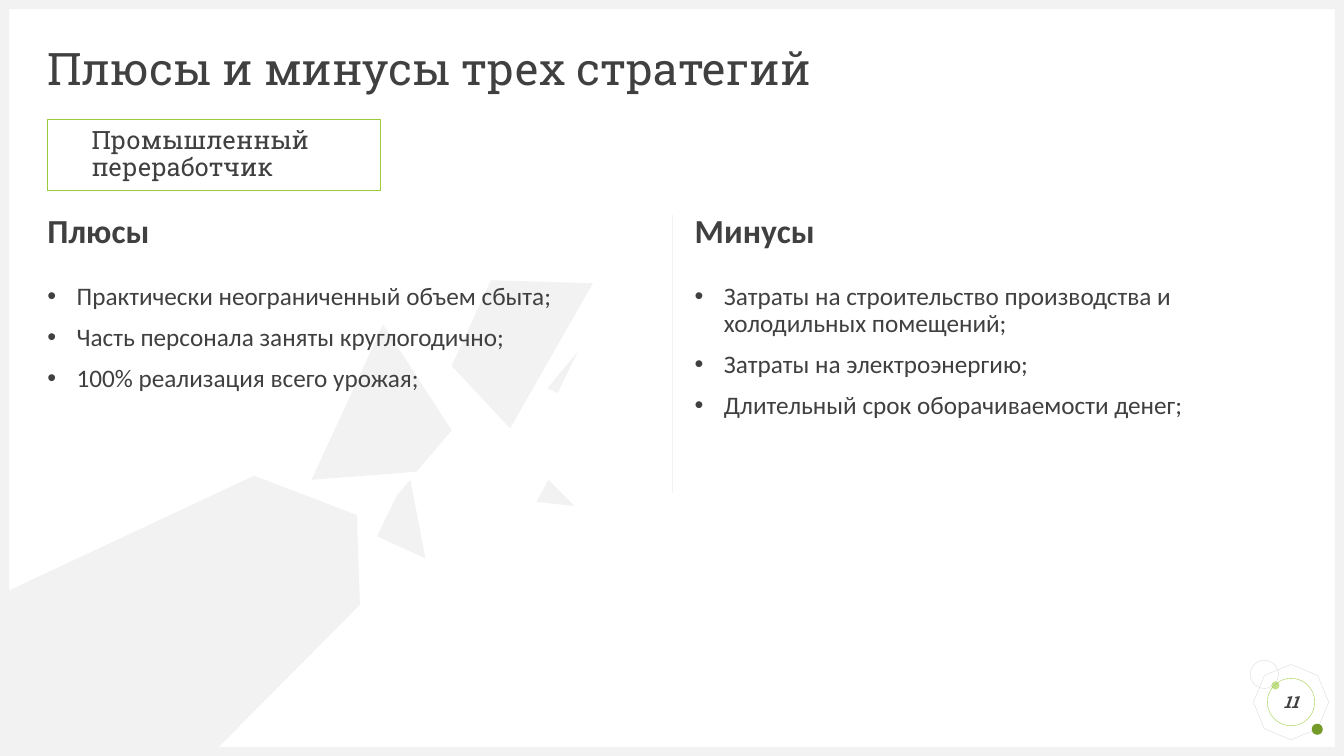
from dataclasses import dataclass
from typing import NamedTuple, Optional

from lxml import etree
from pptx import Presentation
from pptx.dml.color import RGBColor
from pptx.enum.shapes import MSO_CONNECTOR, MSO_SHAPE as Preset
from pptx.enum.text import MSO_ANCHOR as Anchor, MSO_AUTO_SIZE, PP_ALIGN as Align
from pptx.oxml.ns import qn
from pptx.util import Pt

PX = 9144  # EMU in one px, 100 px to the inch
SLIDE_WIDTH, SLIDE_HEIGHT = 1333, 750
FRAME = 9
MARGIN = 47
COLUMN_WIDTH = 598
COLUMN_LEFTS = (MARGIN, 689)
BULLET_INDENT = 29

TEXT_GREY = RGBColor(0x40, 0x40, 0x40)
PALE_GREY = RGBColor(0xF2, 0xF2, 0xF2)
OUTLINE_GREY = RGBColor(0xD9, 0xD9, 0xD9)
GREEN = RGBColor(0x9A, 0xCB, 0x39)
LIGHT_GREEN = RGBColor(0xC2, 0xE0, 0x88)
DARK_GREEN = RGBColor(0x74, 0x9A, 0x29)

SERIF, SANS = "Roboto Slab", "Calibri"


class Box(NamedTuple):
    left: int
    top: int
    width: int
    height: int

    def emu(self) -> list[int]:
        return [length * PX for length in self]


@dataclass
class Figure:
    box: Box
    preset: Preset = Preset.RECTANGLE
    fill: Optional[RGBColor] = None
    line: Optional[RGBColor] = None
    line_points: float = 0.25
    rotation: float = 0


@dataclass
class Column:
    left: int
    heading: str
    points: list[str]


FIGURES = [
    Figure(Box(1246, 662, 69, 69), Preset.OCTAGON, line=OUTLINE_GREY, rotation=22.7),
    Figure(Box(1261, 676, 8, 8), Preset.OVAL, fill=LIGHT_GREEN),
    Figure(Box(1301, 718, 11, 11), Preset.OVAL, fill=DARK_GREEN),
    Figure(Box(1240, 655, 28, 28), Preset.OVAL, line=OUTLINE_GREY),
    Figure(Box(0, SLIDE_HEIGHT - FRAME, SLIDE_WIDTH, FRAME), fill=PALE_GREY),
    Figure(Box(0, 0, SLIDE_WIDTH, FRAME), fill=PALE_GREY),
    Figure(Box(0, 0, FRAME, SLIDE_HEIGHT), fill=PALE_GREY),
    Figure(Box(SLIDE_WIDTH - FRAME, 0, FRAME, SLIDE_HEIGHT), fill=PALE_GREY),
    Figure(Box(MARGIN, 119, 330, 70), line=GREEN, line_points=0.75),
]
NUMBER_RING = Figure(Box(1257, 673, 47, 47), Preset.OVAL, line=GREEN)

SHARDS = [
    [(544, 476), (570, 502), (532, 498)],
    [(407, 476), (422, 554), (374, 532), (394, 491)],
    [(252, 472), (354, 511), (357, 600), (208, 750), (15, 750), (0, 735), (0, 590)],
    [(573, 349), (553, 390), (543, 385)],
    [(380, 322), (448, 427), (413, 468), (309, 476)],
    [(487, 278), (588, 281), (506, 425), (448, 363)],
]

COLUMNS = [
    Column(COLUMN_LEFTS[0], "Плюсы", [
        "Практически неограниченный объем сбыта;",
        "Часть персонала заняты круглогодично;",
        "100% реализация всего урожая;",
    ]),
    Column(COLUMN_LEFTS[1], "Минусы", [
        "Затраты на строительство производства и холодильных помещений;",
        "Затраты на электроэнергию;",
        "Длительный срок оборачиваемости денег;",
    ]),
]


def set_attributes(target, values: dict) -> None:
    for name, value in values.items():
        setattr(target, name, value)


def paint(shape, fill: Optional[RGBColor], line: Optional[RGBColor], points: float) -> None:
    shape.shadow.inherit = False
    if fill is None:
        shape.fill.background()
    else:
        shape.fill.solid()
        shape.fill.fore_color.rgb = fill
    if line is None:
        shape.line.fill.background()
    else:
        shape.line.color.rgb = line
        shape.line.width = Pt(points)


def add_figure(slide, figure: Figure):
    shape = slide.shapes.add_shape(figure.preset, *figure.box.emu())
    shape.rotation = figure.rotation
    paint(shape, figure.fill, figure.line, figure.line_points)
    return shape


def add_shards(slide) -> None:
    builder = slide.shapes.build_freeform(*SHARDS[0][0], scale=PX)
    for index, (start, *corners) in enumerate(SHARDS):
        if index:
            builder.move_to(*start)
        builder.add_line_segments(corners, close=True)
    paint(builder.convert_to_shape(), PALE_GREY, None, 0)


def add_divider(slide, x: int, top: int, bottom: int) -> None:
    line = slide.shapes.add_connector(
        MSO_CONNECTOR.STRAIGHT, x * PX, top * PX, x * PX, bottom * PX)
    line.line.color.rgb = PALE_GREY
    line.line.width = Pt(0.5)
    etree.SubElement(line.element.spPr, qn("a:effectLst"))


def write(shape, texts: list[str], size: int, font: str, *, bold: bool = False,
          italic: bool = False, align: Align = Align.LEFT, anchor: Anchor = Anchor.TOP,
          before: int = 10, spacing: float = 0.9, inset: int = 0, bulleted: bool = False) -> None:
    frame = shape.text_frame
    frame.text = "\n".join(texts)
    set_attributes(frame, {"word_wrap": True, "auto_size": MSO_AUTO_SIZE.NONE,
                           "vertical_anchor": anchor})
    set_attributes(frame, {f"margin_{side}": inset * PX for side in ("left", "right")})
    set_attributes(frame, {f"margin_{side}": inset * PX // 2 for side in ("top", "bottom")})
    for paragraph in frame.paragraphs:
        set_attributes(paragraph, {"alignment": align, "line_spacing": spacing,
                                   "space_before": Pt(before)})
        for run in paragraph.runs:
            set_attributes(run.font, {"size": Pt(size), "name": font, "bold": bold,
                                      "italic": italic})
            run.font.color.rgb = TEXT_GREY
        if bulleted:
            add_bullet(paragraph)


def add_bullet(paragraph) -> None:
    properties = paragraph._p.get_or_add_pPr()
    properties.set("marL", str(BULLET_INDENT * PX))
    properties.set("indent", str(-BULLET_INDENT * PX))
    etree.SubElement(properties, qn("a:buFont")).set("typeface", "Arial")
    etree.SubElement(properties, qn("a:buChar")).set("char", "•")


def place(placeholder, box: Box) -> None:
    """Move a placeholder to its box and in front of the decoration."""
    set_attributes(placeholder, dict(zip(("left", "top", "width", "height"), box.emu())))
    placeholder.element.getparent().append(placeholder.element)


def main() -> None:
    presentation = Presentation()
    set_attributes(presentation, {"slide_width": SLIDE_WIDTH * PX,
                                  "slide_height": SLIDE_HEIGHT * PX})
    slide = presentation.slides.add_slide(presentation.slide_layouts.get_by_name("Comparison"))
    title, *bodies = slide.placeholders

    for figure in FIGURES:
        add_figure(slide, figure)
    add_shards(slide)
    add_divider(slide, 667, 213, 489)

    place(title, Box(MARGIN, 47, 1240, 47))
    write(title, ["Плюсы и минусы трех стратегий"], 32, SERIF, anchor=Anchor.MIDDLE, before=0)

    for column, heading, points in zip(COLUMNS, bodies[::2], bodies[1::2]):
        place(heading, Box(column.left, 213, COLUMN_WIDTH, 39))
        write(heading, [column.heading], 24, SANS, bold=True)
        place(points, Box(column.left, 281, COLUMN_WIDTH, 342))
        write(points, column.points, 18, SANS, bulleted=True)

    write(add_figure(slide, NUMBER_RING), ["11"], 12, SERIF, bold=True, italic=True,
          align=Align.CENTER, anchor=Anchor.MIDDLE, before=0, spacing=1.0)

    strategy = slide.shapes.add_textbox(*Box(81, 118, 315, 71).emu())
    write(strategy, ["Промышленный переработчик"], 18, SERIF, anchor=Anchor.MIDDLE, inset=10)

    presentation.save("out.pptx")


if __name__ == "__main__":
    main()
